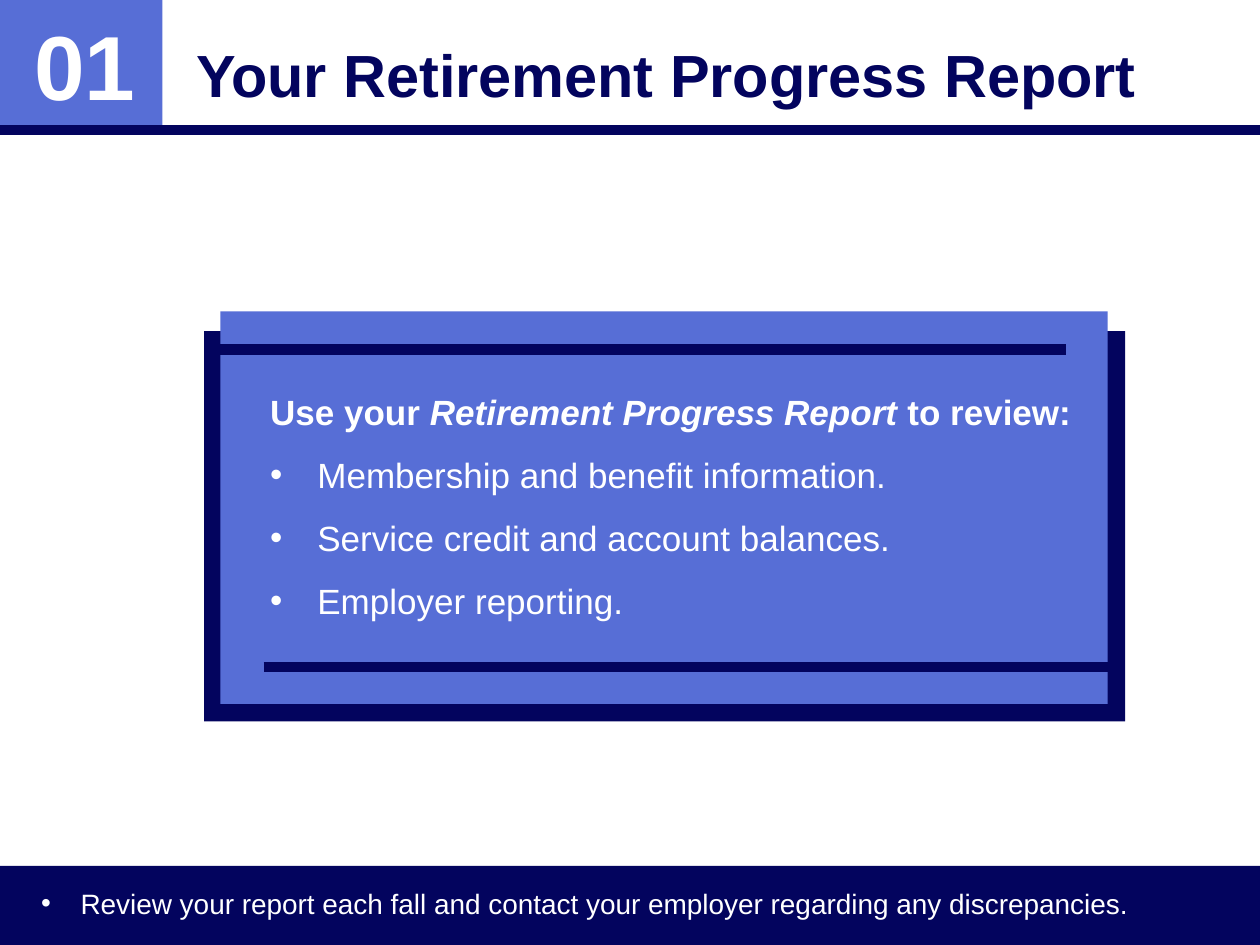
from dataclasses import dataclass
from typing import NamedTuple

from lxml.etree import SubElement
from pptx import Presentation
from pptx.dml.color import RGBColor
from pptx.enum.shapes import MSO_CONNECTOR, MSO_SHAPE
from pptx.enum.text import MSO_ANCHOR, PP_ALIGN
from pptx.oxml.ns import qn
from pptx.util import Pt


@dataclass(frozen=True)
class Theme:
    navy: RGBColor = RGBColor(0x03, 0x04, 0x5E)
    blue: RGBColor = RGBColor(0x57, 0x6E, 0xD6)
    white: RGBColor = RGBColor(0xFF, 0xFF, 0xFF)
    font: str = "Arial"
    number: int = 52
    title: int = 34
    body: int = 20
    note: int = 16
    rule: int = 6


class Box(NamedTuple):
    left: float
    top: float
    width: float
    height: float


class Rule(NamedTuple):
    start: float
    end: float
    level: float


class Piece(NamedTuple):
    text: str
    bold: bool = False
    slant: bool = False


@dataclass(frozen=True)
class Para:
    pieces: tuple[Piece, ...]
    indent: float = 0
    after: float = 0
    spacing: float = 1
    align: PP_ALIGN = PP_ALIGN.LEFT


THEME = Theme()


def add_panel(slide, box: Box, color: RGBColor) -> None:
    panel = slide.shapes.add_shape(MSO_SHAPE.RECTANGLE, *map(Pt, box))
    panel.shadow.inherit = False
    panel.fill.solid()
    panel.fill.fore_color.rgb = color
    panel.line.fill.background()


def add_rule(slide, rule: Rule) -> None:
    line = slide.shapes.add_connector(
        MSO_CONNECTOR.STRAIGHT,
        Pt(rule.start), Pt(rule.level), Pt(rule.end), Pt(rule.level),
    )
    line.line.color.rgb = THEME.navy
    line.line.width = Pt(THEME.rule)
    SubElement(line._element.spPr, qn("a:effectLst"))


def add_bullet(para, indent: float) -> None:
    props = para._p.get_or_add_pPr()
    props.set("marL", str(Pt(indent)))
    props.set("indent", str(-Pt(indent)))
    SubElement(props, qn("a:buFont"), typeface=THEME.font)
    SubElement(props, qn("a:buChar"), char="•")


def add_text(slide, box: Box, paras: list[Para], size: int,
             color: RGBColor, anchor: MSO_ANCHOR = MSO_ANCHOR.TOP) -> None:
    frame = slide.shapes.add_textbox(*map(Pt, box)).text_frame
    frame.word_wrap = True
    frame.vertical_anchor = anchor
    for index, item in enumerate(paras):
        para = frame.add_paragraph() if index else frame.paragraphs[0]
        if item.indent:
            add_bullet(para, item.indent)
        para.alignment = item.align
        para.line_spacing = item.spacing
        para.space_after = Pt(item.after)
        for piece in item.pieces:
            run = para.add_run()
            run.text = piece.text
            run.font.name = THEME.font
            run.font.size = Pt(size)
            run.font.color.rgb = color
            run.font.bold = piece.bold
            run.font.italic = piece.slant


def main() -> None:
    deck = Presentation()
    deck.slide_width, deck.slide_height = Pt(720), Pt(540)
    slide = deck.slides.add_slide(deck.slide_layouts[6])

    add_panel(slide, Box(0, 0, 92.8, 74.2), THEME.blue)
    add_rule(slide, Rule(0, 720, 74.4))
    add_panel(slide, Box(0, 494.8, 720, 45.2), THEME.navy)
    add_text(slide, Box(12, 5.8, 72.7, 69),
             [Para((Piece("01", True),), spacing=0.9, align=PP_ALIGN.CENTER)],
             THEME.number, THEME.white, MSO_ANCHOR.MIDDLE)
    add_text(slide, Box(105, 0.7, 576, 74.2),
             [Para((Piece("Your Retirement Progress Report", True),), spacing=1.2)],
             THEME.title, THEME.navy, MSO_ANCHOR.MIDDLE)

    frame = Box(116.6, 189.2, 526.3, 223)
    add_panel(slide, frame, THEME.navy)
    add_panel(slide, Box(126, 178, 507, 224.2), THEME.blue)
    heading = Para((
        Piece("Use your ", True),
        Piece("Retirement Progress Report ", True, True),
        Piece("to review:", True),
    ), after=12)
    topics = (
        "Membership and benefit information.",
        "Service credit and account balances.",
        "Employer reporting.",
    )
    points = [Para((Piece(topic),), indent=27, after=12) for topic in topics]
    add_text(slide, Box(147.3, 219.6, 472.3, 140.4),
             [heading, *points], THEME.body, THEME.white)

    right = frame.left + frame.width
    inset = 34
    add_rule(slide, Rule(frame.left + inset, right, 381.2))
    add_rule(slide, Rule(frame.left, right - inset, 199.6))

    note = "Review your report each fall and contact your employer regarding any discrepancies."
    add_text(slide, Box(16.4, 502.8, 697.7, 26.6),
             [Para((Piece(note),), indent=22.5)], THEME.note, THEME.white)

    deck.save("out.pptx")


if __name__ == "__main__":
    main()
